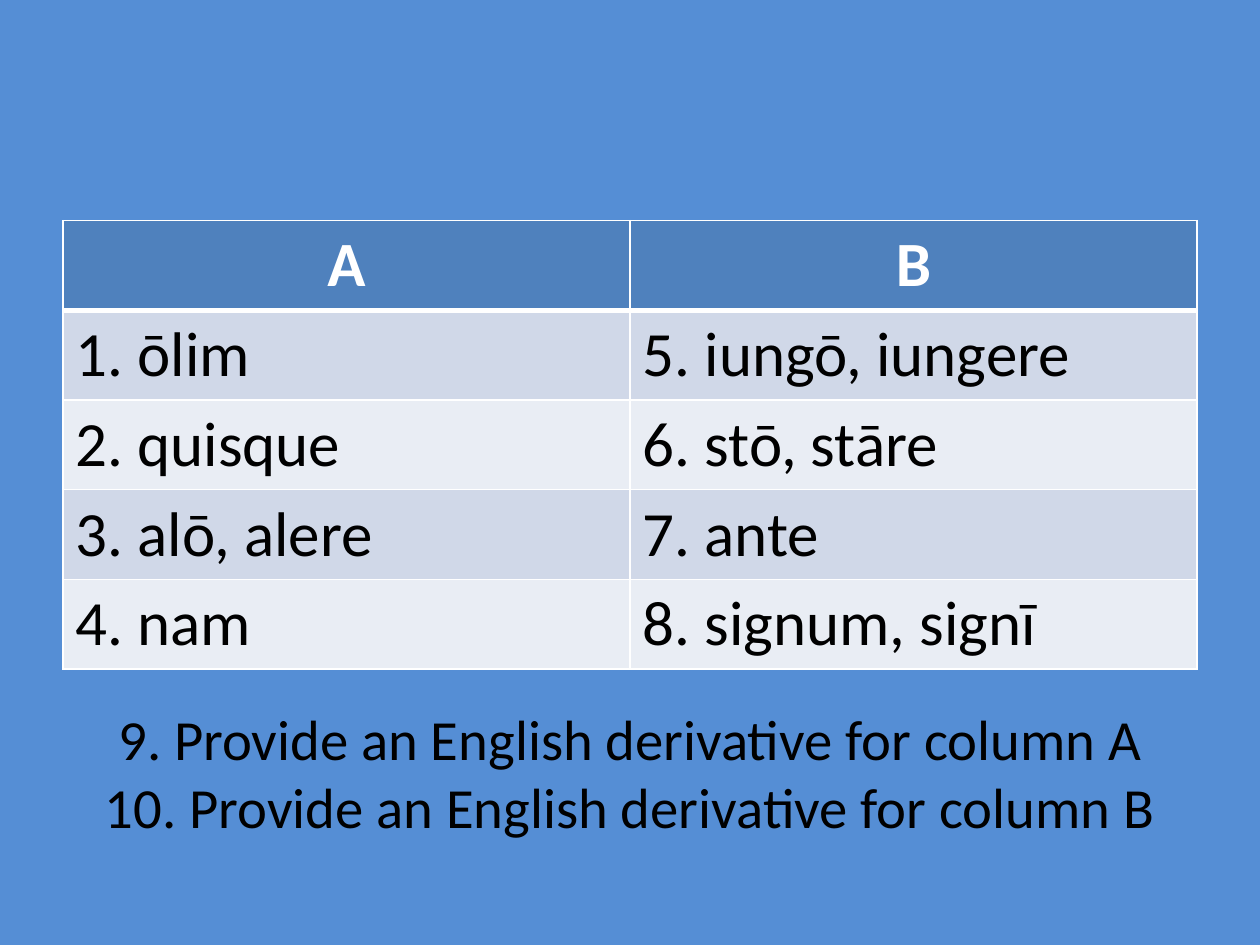
from dataclasses import dataclass

from lxml import etree
from pptx import Presentation
from pptx.dml.color import RGBColor
from pptx.enum.text import MSO_ANCHOR, PP_ALIGN
from pptx.oxml.ns import qn
from pptx.util import Inches, Pt

CENTER, LEFT = PP_ALIGN.CENTER, PP_ALIGN.LEFT
MIDDLE = MSO_ANCHOR.MIDDLE


@dataclass(frozen=True)
class Theme:
    font: str = "Calibri"
    background: str = "558ED5"
    header: str = "4F81BD"
    bands: tuple = ("D0D8E8", "E9EDF4")
    white: str = "FFFFFF"
    black: str = "000000"
    table_size: float = 36
    task_size: float = 32.4


THEME = Theme()


def add_run(p, text, size, color, bold=False):
    r = p.add_run()
    r.text = text
    r.font.name = THEME.font
    r.font.size = Pt(size)
    r.font.bold = bold
    r.font.color.rgb = RGBColor.from_string(color)


def set_borders(cell, bottom):
    tc_pr = cell._tc.get_or_add_tcPr()
    widths = {"a:lnL": 1, "a:lnR": 1, "a:lnT": 1, "a:lnB": bottom}
    for i, (tag, width) in enumerate(widths.items()):
        ln = etree.Element(qn(tag), w=str(Pt(width)))
        fill = etree.SubElement(ln, qn("a:solidFill"))
        etree.SubElement(fill, qn("a:srgbClr"), val=THEME.white)
        tc_pr.insert(i, ln)


prs = Presentation()
prs.slide_width, prs.slide_height = Inches(10), Inches(7.5)
s = prs.slides.add_slide(prs.slide_layouts[6])
s.background.fill.solid()
s.background.fill.fore_color.rgb = RGBColor.from_string(THEME.background)

# Vocabulary table
rows = [
    ("A", "B"),
    ("1. ōlim", "5. iungō, iungere"),
    ("2. quisque", "6. stō, stāre"),
    ("3. alō, alere", "7. ante"),
    ("4. nam", "8. signum, signī"),
]
row_height = Inches(0.71)
table = s.shapes.add_table(len(rows), 2, Inches(0.5), Inches(1.75),
                           Inches(9), row_height * len(rows)).table
for i, words in enumerate(rows):
    table.rows[i].height = row_height
    is_header = i == 0
    fill = THEME.header if is_header else THEME.bands[(i - 1) % 2]
    for j, word in enumerate(words):
        cell = table.cell(i, j)
        cell.fill.solid()
        cell.fill.fore_color.rgb = RGBColor.from_string(fill)
        set_borders(cell, 3 if is_header else 1)
        p = cell.text_frame.paragraphs[0]
        p.alignment = CENTER if is_header else LEFT
        add_run(p, word, THEME.table_size,
                THEME.white if is_header else THEME.black, is_header)

# Derivative tasks below the table
sp = s.shapes.add_textbox(Inches(0.5), Inches(5.5), Inches(9), Inches(1.25))
tf = sp.text_frame
tf.word_wrap = True
tf.vertical_anchor = MIDDLE
p = tf.paragraphs[0]
p.alignment = CENTER
add_run(p, "9. Provide an English derivative for column A",
        THEME.task_size, THEME.black)
p.add_line_break()
add_run(p, "10. Provide an English derivative for column B",
        THEME.task_size, THEME.black)

prs.save("out.pptx")
